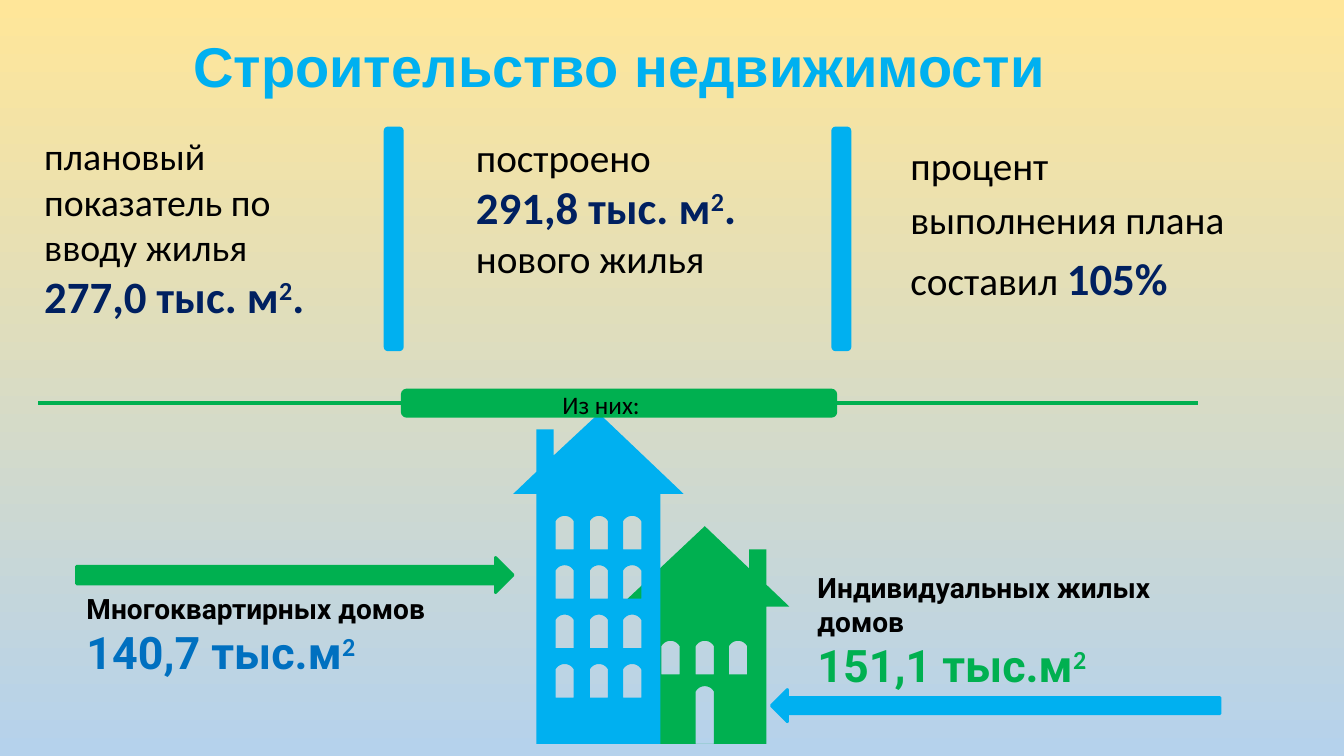
from dataclasses import dataclass

from lxml import etree
from pptx import Presentation
from pptx.dml.color import RGBColor
from pptx.enum import shapes, text
from pptx.oxml.ns import qn
from pptx.util import Inches, Pt


@dataclass(frozen=True)
class Theme:
    sky: str = "FFE699"
    ground: str = "B5D2EC"
    blue: str = "00B0F0"
    green: str = "00B050"
    navy: str = "002060"
    royal: str = "0070C0"
    black: str = "000000"
    body: str = "Calibri"
    heading: str = "Arial"
    label: str = "Roboto"
    title_size: int = 40
    figure_size: int = 32
    body_size: int = 28
    narrow_size: int = 27
    label_size: int = 20
    tag_size: int = 18


THEME = Theme()


@dataclass(frozen=True)
class Words:
    text: str
    size: int
    color: str = THEME.black
    font: str = THEME.body
    bold: bool = False
    raised: bool = False


@dataclass(frozen=True)
class TextBlock:
    box: tuple
    paragraphs: list
    margins: tuple = (0.1, 0.05)
    indent: float = 0
    spacing: float = 1.0
    middle: bool = False
    grow: bool = False


@dataclass(frozen=True)
class Block:
    kind: int
    box: tuple
    color: str


@dataclass(frozen=True)
class House:
    color: str
    outline: list
    openings: list  # left, top and bottom of each arched opening


def rgb(color: str) -> RGBColor:
    return RGBColor.from_string(color)


def inches(values) -> list:
    return [Inches(value) for value in values]


def add_words(paragraph, words: Words) -> None:
    run = paragraph.add_run()
    run.text = words.text
    run.font.size = Pt(words.size)
    run.font.name = words.font
    run.font.bold = words.bold
    run.font.color.rgb = rgb(words.color)
    if words.raised:
        run._r.get_or_add_rPr().set("baseline", "30000")


def add_text(slide, block: TextBlock) -> None:
    frame = slide.shapes.add_textbox(*inches(block.box)).text_frame
    frame.word_wrap = True
    frame.margin_left = frame.margin_right = Inches(block.margins[0])
    frame.margin_top = frame.margin_bottom = Inches(block.margins[1])
    anchors = text.MSO_ANCHOR
    frame.vertical_anchor = anchors.MIDDLE if block.middle else anchors.TOP
    sizing = text.MSO_AUTO_SIZE
    frame.auto_size = sizing.SHAPE_TO_FIT_TEXT if block.grow else sizing.NONE
    for index, line in enumerate(block.paragraphs):
        paragraph = frame.add_paragraph() if index else frame.paragraphs[0]
        paragraph.line_spacing = block.spacing
        properties = paragraph._p.get_or_add_pPr()
        properties.set("marL", str(Inches(block.indent)))
        properties.set("indent", "0")
        for words in line:
            if words.text == "\n":
                paragraph.add_line_break()
            else:
                add_words(paragraph, words)


def add_block(slide, block: Block):
    shape = slide.shapes.add_shape(block.kind, *inches(block.box))
    shape.shadow.inherit = False
    shape.fill.solid()
    shape.fill.fore_color.rgb = rgb(block.color)
    shape.line.color.rgb = rgb(block.color)
    shape.line.width = Pt(2)
    return shape


def arch(left: float, top: float, bottom: float) -> list:
    """Points of an opening 0.18 wide with a curved top."""
    width, rise, steps = 0.18, 0.07, 10
    points = []
    for step in range(steps + 1):
        t = step / steps
        bend = 3 * t * (1 - t)
        x = left + width * (bend * ((1 - t) * 0.22 + t * 0.78) + t ** 3)
        points.append((x, top - rise * bend))
    return points + [(left + width, bottom), (left, bottom)]


def add_house(slide, house: House) -> None:
    contours = [house.outline] + [arch(*opening) for opening in house.openings]
    builder = slide.shapes.build_freeform(*inches(contours[0][0]), scale=1.0)
    for index, contour in enumerate(contours):
        if index:
            builder.move_to(*inches(contour[0]))
        builder.add_line_segments([inches(point) for point in contour[1:]])
    shape = builder.convert_to_shape()
    shape.shadow.inherit = False
    shape.fill.solid()
    shape.fill.fore_color.rgb = rgb(house.color)
    shape.line.fill.background()


def add_rule(slide, start: float, end: float, y: float):
    rule = slide.shapes.add_connector(
        shapes.MSO_CONNECTOR.STRAIGHT, *inches((start, y, end, y)))
    rule.line.color.rgb = rgb(THEME.green)
    rule.line.width = Pt(3)
    etree.SubElement(rule._element.spPr, qn("a:effectLst"))
    return rule


def figure(amount: str, color: str, font: str = THEME.body,
           ending: str = "") -> list:
    """A bold amount followed by a raised 2."""
    size = THEME.figure_size
    parts = [Words(amount, size, color, font, True),
             Words("2", size, color, bold=True, raised=True)]
    return parts + ([Words(ending, size, color, bold=True)] if ending else [])


def label(caption: str, amount: str, color: str) -> list:
    return [[Words(caption, THEME.label_size, font=THEME.label, bold=True)],
            figure(amount, color, THEME.label)]


BREAK = Words("\n", THEME.body_size)
COLUMNS = (0, 0.34, 0.67)
HOUSES = [
    House(THEME.green,
          [(6.14, 6.02), (6.37, 6.02), (6.37, 7.38), (7.6, 7.38), (7.6, 6.02),
           (7.83, 6.02), (7.6, 5.8), (7.6, 5.45), (7.43, 5.45), (7.43, 5.64),
           (6.99, 5.22)],
          [(6.56 + x, 6.41, 6.69) for x in COLUMNS] + [(6.9, 6.86, 7.38)]),
    House(THEME.blue,
          [(5.09, 4.9), (5.32, 4.9), (5.32, 7.38), (6.55, 7.38), (6.55, 4.9),
           (6.78, 4.9), (5.94, 4.1), (5.49, 4.52), (5.49, 4.26), (5.32, 4.26),
           (5.32, 4.68)],
          [(5.51 + x, 5.17 + 0.49 * floor, 5.45 + 0.49 * floor)
           for x in COLUMNS for floor in range(4)]),
]
KINDS = shapes.MSO_SHAPE
BLOCKS = [
    Block(KINDS.LEFT_ARROW, (7.65, 6.84, 4.45, 0.32), THEME.blue),
    Block(KINDS.RIGHT_ARROW, (0.76, 5.53, 4.33, 0.35), THEME.green),
    Block(KINDS.ROUNDED_RECTANGLE, (3.82, 1.27, 0.17, 2.2), THEME.blue),
    Block(KINDS.ROUNDED_RECTANGLE, (8.26, 1.27, 0.17, 2.2), THEME.blue),
]
BANNER = Block(KINDS.ROUNDED_RECTANGLE, (3.99, 3.87, 4.3, 0.26), THEME.green)
TEXTS = [
    TextBlock((5.48, 3.81, 1.42, 0.4), [[Words("Из них:", THEME.tag_size)]],
              grow=True),
    TextBlock((0.76, 6.05, 3.97, 0.5), label(
        "Многоквартирных домов", "140,7 тыс.м", THEME.royal),
        margins=(0.1, 0.1), middle=True),
    TextBlock((8.01, 5.68, 3.73, 1.16), label(
        "Индивидуальных жилых домов", "151,1 тыс.м", THEME.green),
        margins=(0.1, 0.1), middle=True),
    TextBlock((0.22, 1.27, 3.31, 1.98), [
        [Words("плановый показатель по вводу жилья", THEME.narrow_size), BREAK,
         *figure("277,0 тыс. м", THEME.navy, ending=".")]],
        indent=0.12, grow=True),
    TextBlock((4.6, 1.32, 3.18, 1.84), [
        [Words("построено", THEME.body_size), BREAK,
         *figure("291,8 тыс. м", THEME.navy, ending=". "),
         Words("нового жилья", THEME.body_size)]],
        margins=(0, 0), indent=0.12),
    TextBlock((8.91, 1.33, 3.33, 1.9), [
        [Words("процент выполнения плана составил ", THEME.body_size),
         Words("105%", THEME.figure_size, THEME.navy, bold=True)]],
        margins=(0, 0), indent=0.12, spacing=1.15),
]


def main() -> None:
    presentation = Presentation()
    presentation.slide_width, presentation.slide_height = inches((13.33, 7.5))
    slide = presentation.slides.add_slide(presentation.slide_layouts[5])

    # Background
    fill = slide.background.fill
    fill.gradient()
    fill.gradient_angle = 270
    for stop, color in zip(fill.gradient_stops, (THEME.sky, THEME.ground)):
        stop.color.rgb = rgb(color)

    # Title
    title = slide.shapes.title
    title.left, title.top, title.width, title.height = inches(
        (0.39, -0.04, 11.5, 1.45))
    title.text_frame.vertical_anchor = text.MSO_ANCHOR.MIDDLE
    heading = title.text_frame.paragraphs[0]
    heading.alignment = text.PP_ALIGN.CENTER
    heading.line_spacing = 0.9
    add_words(heading, Words("Строительство недвижимости", THEME.title_size,
                             THEME.blue, THEME.heading, True))

    # Houses, arrows and dividers
    for house in HOUSES:
        add_house(slide, house)
    for block in BLOCKS:
        add_block(slide, block)

    # Banner with a rule on each side
    banner = add_block(slide, BANNER)
    add_rule(slide, 0.38, 3.99, 4).end_connect(banner, 1)
    add_rule(slide, 8.29, 11.88, 4).begin_connect(banner, 3)

    # Texts
    for block in TEXTS:
        add_text(slide, block)

    presentation.save("out.pptx")


if __name__ == "__main__":
    main()
